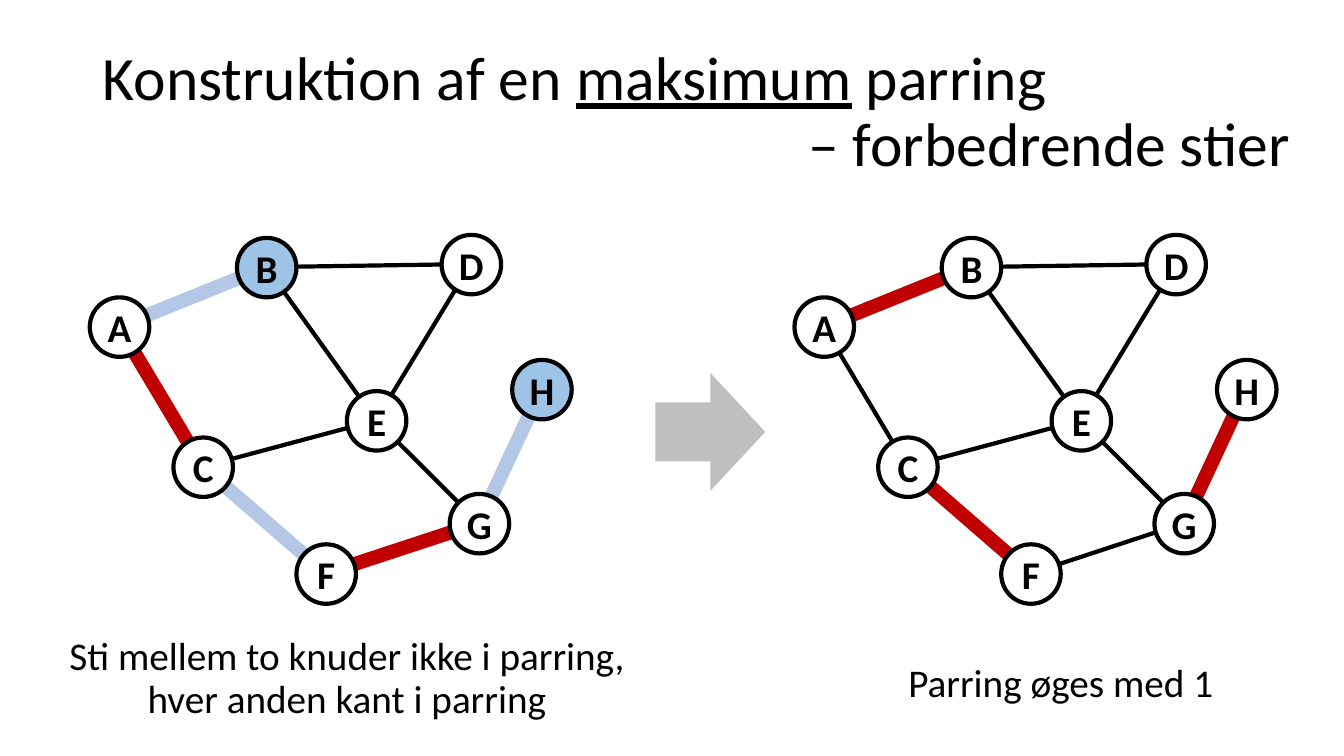
from dataclasses import dataclass
from typing import NamedTuple

from lxml import etree
from pptx import Presentation
from pptx.dml.color import RGBColor
from pptx.enum.shapes import MSO_CONNECTOR, MSO_SHAPE
from pptx.enum.text import MSO_ANCHOR, PP_ALIGN
from pptx.oxml.ns import qn
from pptx.util import Pt

LEFT, MID, RIGHT = PP_ALIGN.LEFT, PP_ALIGN.CENTER, PP_ALIGN.RIGHT
TOP, CENTER = MSO_ANCHOR.TOP, MSO_ANCHOR.MIDDLE
OVAL, ARROW = MSO_SHAPE.OVAL, MSO_SHAPE.RIGHT_ARROW
LINE = MSO_CONNECTOR.STRAIGHT
SCALE = 9144


@dataclass(frozen=True)
class Theme:
    font: str = "Calibri"
    ink: str = "000000"
    paper: str = "FFFFFF"
    red: str = "C00000"
    pale: str = "B4C7E7"
    free: str = "9DC3E6"
    gray: str = "BFBFBF"
    title: int = 44
    body: int = 28
    thin: int = 3
    thick: int = 10


class Box(NamedTuple):
    left: int
    top: int
    width: int
    height: int


class Node(NamedTuple):
    name: str
    left: int
    top: int


class Graph(NamedTuple):
    shift: int
    red: tuple[str, ...]
    pale: tuple[str, ...]
    free: str


class Note(NamedTuple):
    text: str
    box: Box


THEME = Theme()
SIZE = 59
NODES = (
    Node("A", 89, 295),
    Node("B", 235, 236),
    Node("C", 172, 434),
    Node("D", 438, 233),
    Node("E", 344, 388),
    Node("F", 294, 540),
    Node("G", 446, 490),
    Node("H", 508, 357),
)
EDGES = ("EC", "CA", "EB", "DB", "ED", "GH", "FC", "GF", "GE", "AB")
GRAPHS = (
    Graph(0, red=("CA", "GF"), pale=("GH", "FC", "AB"), free="BH"),
    Graph(699, red=("AB", "GH", "FC"), pale=(), free=""),
)
NOTES = (
    Note("Sti mellem to knuder ikke i parring, hver anden kant i parring",
         Box(58, 627, 572, 130)),
    Note("Parring øges med 1", Box(820, 653, 464, 55)),
)


def px(num: int) -> int:
    return num * SCALE


def rgb(code: str) -> RGBColor:
    return RGBColor.from_string(code)


def write(frame, text: str, *, size: int = THEME.body, align=MID,
          bold: bool = False, mark: str = "", space: float = 0.9) -> None:
    para = frame.paragraphs[0]
    if para.runs:
        para = frame.add_paragraph()
    para.alignment = align
    para.line_spacing = space
    for part in text.partition(mark) if mark else (text,):
        run = para.add_run()
        run.text = part
        font = run.font
        font.name = THEME.font
        font.size = Pt(size)
        font.bold = bold
        font.underline = bool(mark) and part == mark
        font.color.rgb = rgb(THEME.ink)


def add_text(slide, box: Box, anchor=TOP):
    frame = slide.shapes.add_textbox(*map(px, box)).text_frame
    frame.word_wrap = True
    frame.vertical_anchor = anchor
    return frame


def add_form(slide, kind, box: Box, fill: str):
    form = slide.shapes.add_shape(kind, *map(px, box))
    form.shadow.inherit = False
    form.fill.solid()
    form.fill.fore_color.rgb = rgb(fill)
    form.line.fill.background()
    return form


def add_edge(slide, start: Node, end: Node, shift: int, color: str, width: int) -> None:
    half = SIZE // 2
    ends = (start.left + shift + half, start.top + half,
            end.left + shift + half, end.top + half)
    edge = slide.shapes.add_connector(LINE, *map(px, ends))
    edge.line.color.rgb = rgb(color)
    edge.line.width = Pt(width)
    etree.SubElement(edge._element.spPr, qn("a:effectLst"))


def add_node(slide, node: Node, shift: int, fill: str) -> None:
    box = Box(node.left + shift, node.top, SIZE, SIZE)
    form = add_form(slide, OVAL, box, fill)
    form.line.color.rgb = rgb(THEME.ink)
    form.line.width = Pt(THEME.thin)
    frame = form.text_frame
    frame.word_wrap = False
    frame.vertical_anchor = CENTER
    frame.margin_left = frame.margin_right = 0
    frame.margin_top = frame.margin_bottom = 0
    write(frame, node.name, bold=True, space=1.0)


def add_graph(slide, graph: Graph) -> None:
    named = {node.name: node for node in NODES}
    layers = (
        (EDGES, THEME.ink, THEME.thin),
        (graph.pale, THEME.pale, THEME.thick),
        (graph.red, THEME.red, THEME.thick),
    )
    for edges, color, width in layers:
        for start, end in edges:
            add_edge(slide, named[start], named[end], graph.shift, color, width)
    for node in NODES:
        fill = THEME.free if node.name in graph.free else THEME.paper
        add_node(slide, node, graph.shift, fill)


def main() -> None:
    deck = Presentation()
    deck.slide_width, deck.slide_height = px(1333), px(750)
    slide = deck.slides.add_slide(deck.slide_layouts[6])

    title = add_text(slide, Box(92, 40, 1210, 145), CENTER)
    title.margin_right = px(22)
    write(title, "Konstruktion af en maksimum parring",
          size=THEME.title, align=LEFT, mark="maksimum")
    write(title, "– forbedrende stier", size=THEME.title, align=RIGHT)

    for graph in GRAPHS:
        add_graph(slide, graph)
    add_form(slide, ARROW, Box(650, 370, 109, 117), THEME.gray)
    for note in NOTES:
        write(add_text(slide, note.box), note.text)

    deck.save("out.pptx")


if __name__ == "__main__":
    main()
